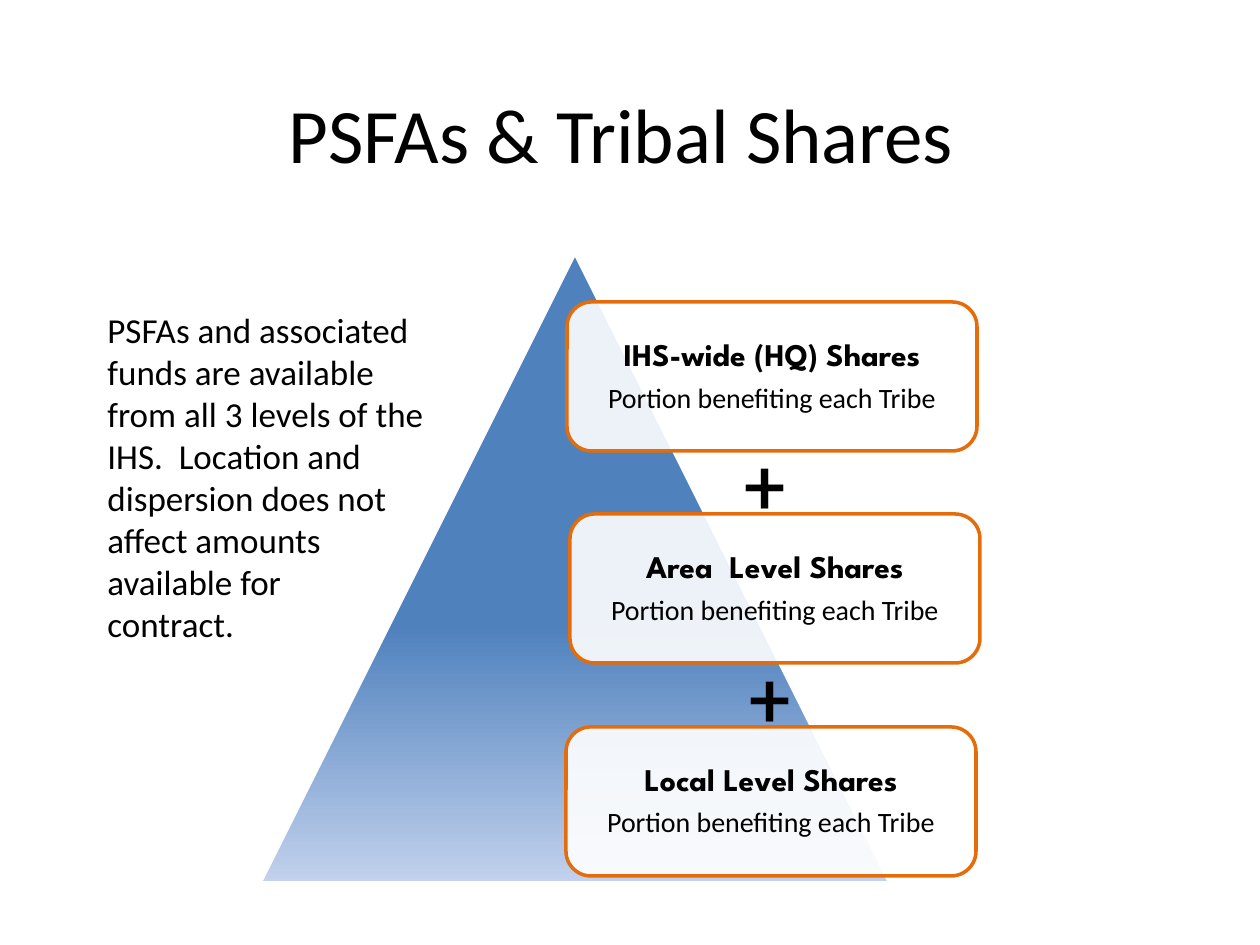
"""Build the slide on PSFAs and tribal shares."""
from lxml.etree import SubElement
from pptx import Presentation
from pptx.dml.color import RGBColor
from pptx.enum.shapes import MSO_SHAPE as Shape
from pptx.enum.text import MSO_ANCHOR as Anchor, PP_ALIGN as Align
from pptx.oxml.ns import qn
from pptx.util import Emu, Pt

SCALE = 914400 / 126
COLORS = {"text": "000000", "white": "FFFFFF", "border": "E46C0A",
          "blue": "4F81BD", "pale": "C2D1ED"}
TITLE = "PSFAs & Tribal Shares "
NOTE = ["PSFAs and associated funds are available from all 3 levels of the IHS.  "
        "Location and dispersion does not affect amounts available for ", "contract."]
BENEFIT = "Portion benefiting each Tribe"
LEVELS = [("IHS-wide (HQ) Shares", 567, 302),
          ("Area  Level Shares", 570, 514),
          ("Local Level Shares", 566, 727)]
PLUSES = [(731, 431), (736, 644)]
CARD_SIZE = (410, 149)
CARD_INSET = 16


def px(*values):
    return [Emu(round(value * SCALE)) for value in values]


def color(name):
    return RGBColor.from_string(COLORS[name])


def add_run(paragraph, text, size, font="Calibri", bold=False):
    run = paragraph.add_run()
    run.text = text
    run.font.name, run.font.size, run.font.bold = font, Pt(size), bold
    run.font.color.rgb = color("text")


def add_text(slide, box, lines, size, font="Calibri", align=Align.LEFT, anchor=Anchor.TOP):
    frame = slide.shapes.add_textbox(*px(*box)).text_frame
    frame.word_wrap, frame.vertical_anchor = True, anchor
    paragraph = frame.paragraphs[0]
    paragraph.alignment = align
    for index, line in enumerate(lines):
        if index:
            paragraph.add_line_break()
        add_run(paragraph, line, size, font)


def add_outlined(slide, kind, box, line):
    shape = slide.shapes.add_shape(kind, *px(*box))
    shape.shadow.inherit = False
    shape.line.color.rgb, shape.line.width = color(line), Pt(2)
    return shape


def add_pyramid(slide):
    fill = add_outlined(slide, Shape.ISOSCELES_TRIANGLE, (260, 253, 630, 630), "white").fill
    fill.gradient()
    fill.gradient_angle = 270
    for stop, position, name in zip(fill.gradient_stops, (0.59, 1), ("blue", "pale")):
        stop.position, stop.color.rgb = position, color(name)


def add_card(slide, heading, left, top):
    card = add_outlined(slide, Shape.ROUNDED_RECTANGLE, (left, top, *CARD_SIZE), "border")
    card.fill.solid()
    card.fill.fore_color.rgb = color("white")
    tint = card.fill._xPr.find(".//" + qn("a:srgbClr"))
    SubElement(tint, qn("a:alpha"), val="90000")
    frame = card.text_frame
    frame.word_wrap, frame.vertical_anchor = True, Anchor.MIDDLE
    frame.margin_left, frame.margin_right, frame.margin_top, frame.margin_bottom = px(*[CARD_INSET] * 4)
    runs = [(heading, 18, "League Spartan", True), (BENEFIT, 16)]
    for paragraph, run in zip((frame.paragraphs[0], frame.add_paragraph()), runs):
        paragraph.alignment, paragraph.line_spacing = Align.CENTER, 0.9
        paragraph.space_after = Pt(6.3)
        add_run(paragraph, *run)


def main():
    presentation = Presentation()
    presentation.slide_width, presentation.slide_height = px(1260, 945)
    slide = presentation.slides.add_slide(presentation.slide_layouts[6])
    add_text(slide, (0, 23, 1260, 219), [TITLE], 44, align=Align.CENTER, anchor=Anchor.MIDDLE)
    add_pyramid(slide)
    for level in LEVELS:
        add_card(slide, *level)
    add_text(slide, (95, 302, 357, 394), NOTE, 20)
    for left, top in PLUSES:
        add_text(slide, (left, top, 78, 106), ["+"], 44, "Roboto Slab")
    presentation.save("out.pptx")


if __name__ == "__main__":
    main()
